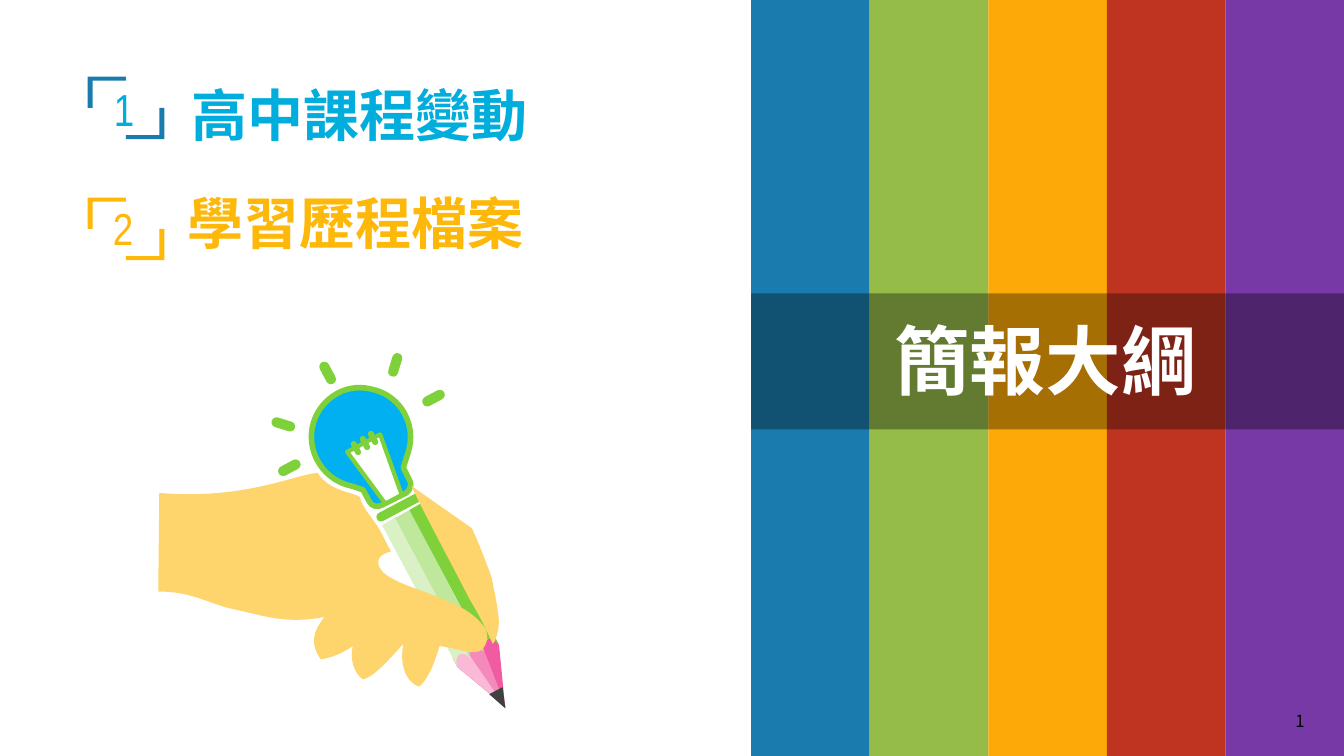
import math

from lxml import etree
from pptx import Presentation
from pptx import util as u
from pptx.dml.color import RGBColor
from pptx.enum import shapes, text
from pptx.oxml.ns import qn

EMU_PER_PX = 9144  # 100 px to the inch
WIDTH, HEIGHT = 1333, 750
PANEL_LEFT = 745
PENCIL_TILT, BULB_TILT = 332, 107

COLORS = {
    "blue": "1A7BAE", "leaf": "95BC49", "orange": "FDA907", "red": "BF3420",
    "purple": "7739A6", "black": "000000", "white": "FFFFFF", "cyan": "00ADDC",
    "yellow": "FEB80A", "green": "7FD13B", "light green": "BFE89D",
    "pale green": "D9F1C4", "pink": "F05BA2", "mid pink": "F48ABC",
    "pale pink": "F9B9D7", "lead": "404040", "bulb": "00B0F0", "skin": "FED46C",
}
RECT = shapes.MSO_SHAPE.RECTANGLE
PILL = shapes.MSO_SHAPE.ROUNDED_RECTANGLE
CJK_TC, CJK_SC, NARROW = "Noto Sans CJK TC", "Noto Sans CJK SC", "Arial Narrow"

# Outlines: (x, y) is a corner, (x1, y1, x2, y2, x, y) is a cubic curve
PENCIL_TIP = [
    ("pink", [(449, 653), (490, 631), (495, 640), (501, 701), (454, 662)]),
    ("mid pink", [(462, 645), (476, 638), (480, 645), (502, 702), (467, 655)]),
    ("pale pink", [(449, 653), (463, 645), (464, 648, 465, 650, 467, 652),
                   (500, 700), (454, 662)]),
]
PENCIL_SIDE = [(379, 521), (393, 513), (467, 653), (466, 653),
               (464, 649, 459, 648, 456, 649), (453, 651, 452, 655, 453, 660)]
BULB = [
    (335, 390), (346, 384, 359, 383, 372, 387), (398, 394, 413, 422, 405, 448),
    (400, 464), (406, 476), (409, 480, 407, 486, 403, 489), (391, 495), (379, 501),
    (374, 504, 368, 502, 366, 497), (360, 486), (354, 484, 349, 482, 344, 481),
    (318, 473, 303, 445, 311, 419), (315, 406, 324, 396, 335, 390),
]
FINGER = [
    (408, 482), (468, 524), (476, 541, 483, 560, 488, 574),
    (490, 587, 493, 597, 494, 609), (496, 618, 494, 631, 489, 639),
    (485, 631, 480, 618, 465, 593), (452, 567, 422, 512, 408, 482),
]
HAND = [
    (315, 469), (326, 487, 349, 488, 357, 493), (358, 502, 371, 516, 375, 523),
    (381, 533, 383, 539, 388, 547), (380, 549, 375, 552, 375, 558),
    (377, 583, 451, 587, 477, 618), (489, 629, 482, 646, 472, 647),
    (458, 647, 454, 643, 436, 641), (430, 661, 424, 674, 416, 681),
    (408, 680, 395, 666, 400, 639), (390, 649, 374, 670, 360, 674),
    (350, 667, 347, 652, 350, 641), (341, 647, 329, 653, 318, 654),
    (305, 635, 314, 622, 322, 612), (286, 619, 265, 612, 235, 605),
    (211, 601, 190, 586, 157, 587), (158, 489), (241, 496, 289, 472, 315, 469),
]
# Left, top, rotation
RAYS = [(387, 350, 17), (276, 409, 287), (320, 358, 332), (425, 383, 62), (282, 452, 242)]
FILAMENT = [(350, 437), (359, 432), (367, 427)]


def px(value):
    return u.Emu(round(value * EMU_PER_PX))


def rgb(color):
    return RGBColor.from_string(COLORS[color])


def paint(shape, color, line=None, line_width=0):
    shape.shadow.inherit = False
    shape.fill.solid()
    shape.fill.fore_color.rgb = rgb(color)
    if line:
        shape.line.color.rgb = rgb(line)
        shape.line.width = u.Pt(line_width)
    else:
        shape.line.fill.background()


def add_block(slide, kind, box, color, rotation=0, line=None, line_width=0):
    shape = slide.shapes.add_shape(kind, *map(px, box))
    shape.rotation = rotation
    if kind == PILL:
        shape.adjustments[0] = 0.5
    paint(shape, color, line, line_width)
    return shape


def turn(x, y, degrees):
    angle = math.radians(degrees)
    return (x * math.cos(angle) - y * math.sin(angle),
            x * math.sin(angle) + y * math.cos(angle))


def upright(segment, rotation):
    """Turn a segment back and give its points in EMU."""
    pairs = zip(segment[::2], segment[1::2])
    return [tuple(map(px, turn(x, y, -rotation))) for x, y in pairs]


def add_outline(slide, outlines, color, rotation=0, line=None, line_width=0):
    contours = [[upright(segment, rotation) for segment in outline] for outline in outlines]
    builder = slide.shapes.build_freeform(*contours[0][0][0])
    for i, contour in enumerate(contours):
        if i:
            builder.move_to(*contour[0][0])
        builder.add_line_segments([segment[-1] for segment in contour[1:]], close=True)
    shape = builder.convert_to_shape()

    # Replace straight steps by cubic curves
    steps = list(shape._element.iter(qn("a:moveTo"), qn("a:lnTo")))
    for step, segment in zip(steps, sum(contours, [])):
        if len(segment) == 3:
            step.tag = qn("a:cubicBezTo")
            step.remove(step[0])
            for x, y in segment:
                point = etree.SubElement(step, qn("a:pt"))
                point.set("x", str(x - shape.left))
                point.set("y", str(y - shape.top))

    # Tilt the shape into place
    half_width, half_height = shape.width / 2, shape.height / 2
    x, y = turn(shape.left + half_width, shape.top + half_height, rotation)
    shape.left, shape.top = round(x - half_width), round(y - half_height)
    shape.rotation = rotation
    paint(shape, color, line, line_width)


def add_text(slide, box, words, font, size, color, bold=False, centred=False, spacing=1.0):
    frame = slide.shapes.add_textbox(*map(px, box)).text_frame
    frame_format = {"word_wrap": True, "auto_size": text.MSO_AUTO_SIZE.NONE,
                    "vertical_anchor": text.MSO_ANCHOR.MIDDLE}
    paragraph = frame.paragraphs[0]
    align = text.PP_ALIGN.CENTER if centred else text.PP_ALIGN.LEFT
    paragraph_format = {"alignment": align, "line_spacing": spacing}
    run = paragraph.add_run()
    run.text = words
    run_format = {"name": font, "size": u.Pt(size), "bold": bold}
    for target, values in ((frame, frame_format), (paragraph, paragraph_format),
                           (run.font, run_format)):
        for name, value in values.items():
            setattr(target, name, value)
    run.font.color.rgb = rgb(color)
    # East Asian typeface
    etree.SubElement(run._r.get_or_add_rPr(), qn("a:ea")).set("typeface", font)


def add_bracket(slide, left, top, color):
    corner = [(0, 0), (38, 0), (38, 4), (5, 4), (5, 31), (0, 31)]
    upper = [(left + x, top + y) for x, y in corner]
    lower = [(left + 76 - x, top + 62 - y) for x, y in corner]
    add_outline(slide, [lower, upper], color)


def add_title_panel(slide):
    stripes = ["blue", "leaf", "orange", "red", "purple"]
    stripe_width = (WIDTH - PANEL_LEFT) / len(stripes)
    for i, color in enumerate(stripes):
        add_block(slide, RECT, (PANEL_LEFT + i * stripe_width, 0, stripe_width, HEIGHT), color)
    band = add_block(slide, RECT, (PANEL_LEFT, 291, WIDTH - PANEL_LEFT, 135), "black")
    fill_color = band.fill._xPr.find(qn("a:solidFill"))[0]
    etree.SubElement(fill_color, qn("a:alpha")).set("val", "34000")
    add_text(slide, (799, 306, 476, 101), "簡報大綱", CJK_SC, 54, "white", True, True)


def add_pencil(slide):
    for color, outline in PENCIL_TIP:
        add_outline(slide, [outline], color, PENCIL_TILT)
    for i, color in enumerate(["pale green", "light green", "green"]):
        dx, dy = 27 * i // 2, -(15 * i // 2)
        side = [tuple(v + (dy if k % 2 else dx) for k, v in enumerate(segment))
                for segment in PENCIL_SIDE]
        add_outline(slide, [side], color, PENCIL_TILT)
    add_block(slide, shapes.MSO_SHAPE.ISOSCELES_TRIANGLE, (489, 684, 15, 20), "lead", 152)


def add_light_bulb(slide):
    add_outline(slide, [BULB], "bulb", BULB_TILT, "green", 4)
    add_block(slide, shapes.MSO_SHAPE.TRAPEZOID, (357, 436, 37, 63), "white", 152, "green", 3)
    for left, top, rotation in RAYS:
        add_block(slide, PILL, (left, top, 10, 24), "green", rotation)
    add_block(slide, PILL, (371, 499, 49, 9), "green", PENCIL_TILT)
    for left, top in FILAMENT:
        add_block(slide, PILL, (left, top, 6, 15), "green", PENCIL_TILT)


def main():
    presentation = Presentation()
    presentation.slide_width, presentation.slide_height = px(WIDTH), px(HEIGHT)
    slide = presentation.slides.add_slide(presentation.slide_layouts[6])
    add_title_panel(slide)
    # Outline entries
    add_bracket(slide, 87, 76, "blue")
    add_text(slide, (180, 75, 573, 77), "高中課程變動", CJK_TC, 40, "cyan", True)
    add_text(slide, (88, 76, 70, 64), "1", NARROW, 32, "cyan", centred=True)
    add_bracket(slide, 87, 196, "yellow")
    add_text(slide, (176, 182, 573, 77), "學習歷程檔案", CJK_TC, 40, "yellow", True)
    add_text(slide, (87, 194, 70, 64), "2", NARROW, 32, "yellow", centred=True)
    # Hand holding a light-bulb pencil
    add_pencil(slide)
    add_light_bulb(slide)
    add_outline(slide, [FINGER, HAND], "skin")
    # Page number
    add_text(slide, (1275, 695, 28, 34), "1", CJK_SC, 12, "black", spacing=1.3)
    presentation.save("out.pptx")


if __name__ == "__main__":
    main()
